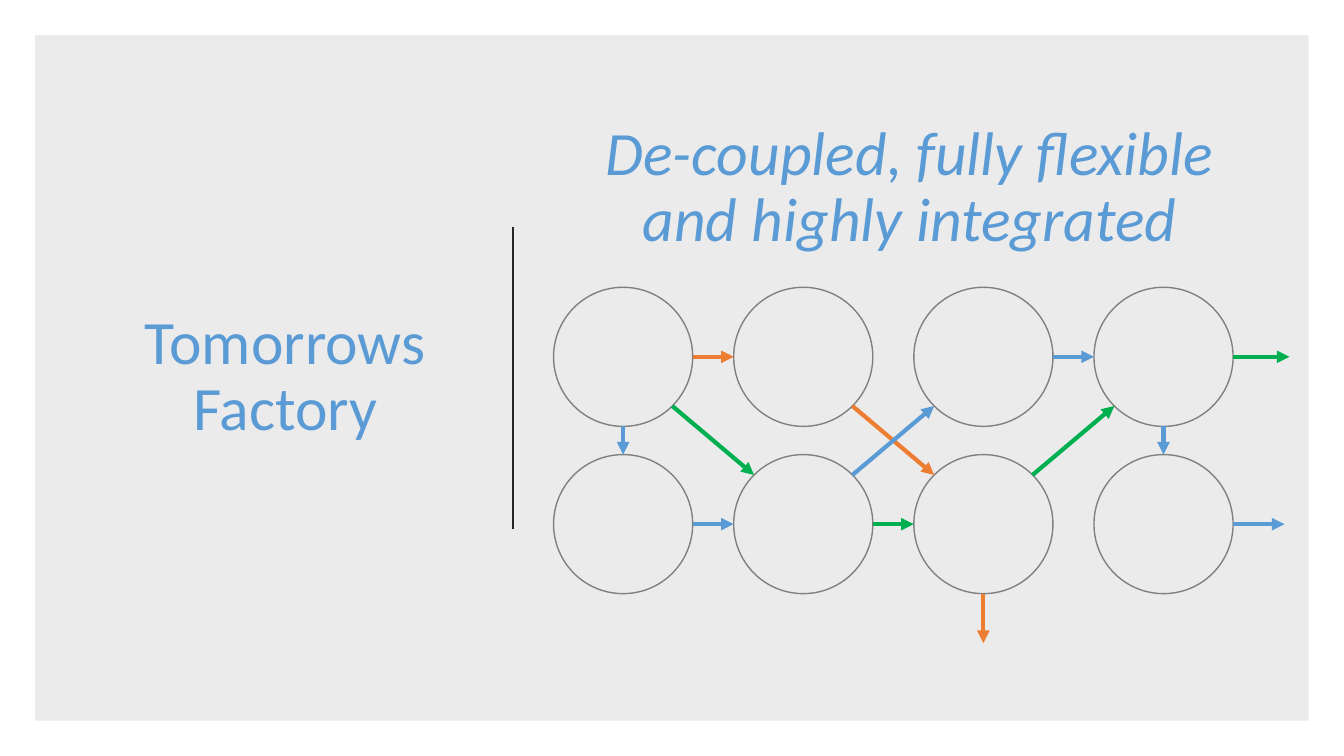
from math import hypot
from lxml import etree
from pptx import Presentation
from pptx.dml.color import RGBColor
from pptx.enum.shapes import MSO_CONNECTOR, MSO_SHAPE
from pptx.enum.text import MSO_ANCHOR, PP_ALIGN
from pptx.oxml.ns import qn
from pptx.util import Pt

PX = 9144
RECT, OVAL = MSO_SHAPE.RECTANGLE, MSO_SHAPE.OVAL
LINE = MSO_CONNECTOR.STRAIGHT
MIDDLE, CENTER = MSO_ANCHOR.MIDDLE, PP_ALIGN.CENTER
BLUE, ORANGE, GREEN = "5B9BD5", "ED7D31", "00B050"
DARK, GRAY, PALE = "262626", "808080", "EBEBEB"

LEFT, RIGHT, UP, DOWN = (-1, 0), (1, 0), (0, -1), (0, 1)
TOP_LEFT, LOW_LEFT = (-1, -1), (-1, 1)
TOP_RIGHT, LOW_RIGHT = (1, -1), (1, 1)

LINKS = [
    ((0, 0), DOWN, (0, 1), UP, BLUE),
    ((2, 0), RIGHT, (3, 0), LEFT, BLUE),
    ((0, 1), RIGHT, (1, 1), LEFT, BLUE),
    ((1, 0), LOW_RIGHT, (2, 1), TOP_LEFT, ORANGE),
    ((1, 1), TOP_RIGHT, (2, 0), LOW_LEFT, BLUE),
    ((0, 0), RIGHT, (1, 0), LEFT, ORANGE),
    ((0, 0), LOW_RIGHT, (1, 1), TOP_LEFT, GREEN),
    ((1, 1), RIGHT, (2, 1), LEFT, GREEN),
    ((2, 1), TOP_RIGHT, (3, 0), LOW_LEFT, GREEN),
    ((3, 0), DOWN, (3, 1), UP, BLUE),
]
EXITS = [
    ((2, 1), DOWN, 49, ORANGE),
    ((3, 0), RIGHT, 56, GREEN),
    ((3, 1), RIGHT, 51, BLUE),
]


def color(code):
    return RGBColor.from_string(code)


def emu(*sizes):
    return [round(size * PX) for size in sizes]


def write(shape, text, size=44, tint=BLUE, italic=False):
    frame = shape.text_frame
    frame.word_wrap = True
    frame.vertical_anchor = MIDDLE
    para = frame.paragraphs[0]
    para.alignment = CENTER
    para.line_spacing = 0.9
    run = para.add_run()
    run.text = text
    font = run.font
    font.name, font.size, font.italic = "Calibri", Pt(size), italic
    font.color.rgb = color(tint)


def draw(slide, kind, box, fill, edge=None):
    shape = slide.shapes.add_shape(kind, *emu(*box))
    shape.shadow.inherit = False
    shape.fill.solid()
    shape.fill.fore_color.rgb = color(fill)
    if edge:
        shape.line.color.rgb = color(edge)
        shape.line.width = Pt(1)
    else:
        shape.line.fill.background()
    return shape


def join(slide, start, end, tint, width=3, arrow=True):
    link = slide.shapes.add_connector(LINE, *emu(*start, *end))
    link.line.color.rgb = color(tint)
    link.line.width = Pt(width)
    if arrow:
        etree.SubElement(link.line._get_or_add_ln(), qn("a:tailEnd"), type="triangle")
    etree.SubElement(link.element.spPr, qn("a:effectLst"))


def add_panel(slide, box):
    panel = draw(slide, RECT, box, "000000")
    tint = panel.element.spPr.find(qn("a:solidFill"))[0]
    etree.SubElement(tint, qn("a:alpha"), val="8000")
    slide.shapes.title.element.addprevious(panel.element)


def add_title(slide, box):
    title = slide.shapes.title
    title.left, title.top, title.width, title.height = emu(*box)
    write(title, "Tomorrows Factory")


def add_claim(slide, box):
    claim = slide.shapes.add_textbox(*emu(*box))
    write(claim, "De-coupled, fully flexible and highly integrated", italic=True)


def add_cells(slide, box, cols=4, rows=2, size=138):
    left, top, width, height = box
    step = (width - size) / (cols - 1)
    drop = (height - size) / (rows - 1)

    def spot(cell, side):
        col, row = cell
        reach = size / 2 / hypot(*side)
        x = left + col * step + size / 2 + side[0] * reach
        y = top + row * drop + size / 2 + side[1] * reach
        return x, y

    for row in range(rows):
        for col in range(cols):
            place = (left + col * step, top + row * drop, size, size)
            draw(slide, OVAL, place, PALE, GRAY)
    for cell, side, goal, edge, tint in LINKS:
        join(slide, spot(cell, side), spot(goal, edge), tint)
    for cell, side, span, tint in EXITS:
        x, y = spot(cell, side)
        join(slide, (x, y), (x + side[0] * span, y + side[1] * span), tint)


def main():
    deck = Presentation()
    deck.slide_width, deck.slide_height = emu(1333, 750)
    slide = deck.slides.add_slide(deck.slide_layouts[5])
    add_panel(slide, (35, 35, 1263, 680))
    add_title(slide, (92, 105, 382, 539))
    join(slide, (509, 225), (509, 525), DARK, width=1.5, arrow=False)
    add_claim(slide, (566, 77, 673, 220))
    add_cells(slide, (549, 285, 674, 304))
    deck.save("out.pptx")


if __name__ == "__main__":
    main()
